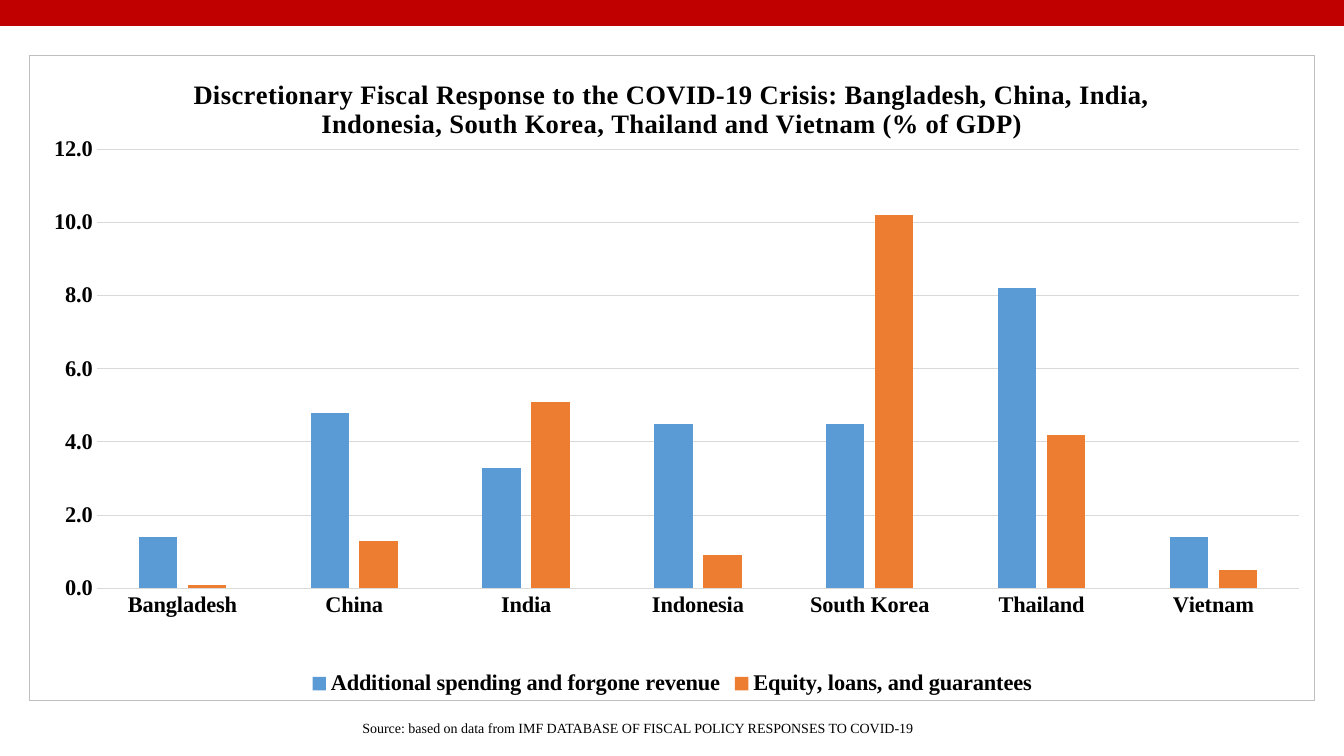
from lxml.etree import SubElement
from pptx import Presentation
from pptx.chart.data import CategoryChartData
from pptx.dml.color import RGBColor
from pptx.enum.chart import XL_CHART_TYPE, XL_LEGEND_POSITION, XL_TICK_MARK
from pptx.enum.shapes import MSO_SHAPE
from pptx.enum.text import PP_ALIGN
from pptx.oxml import parse_xml
from pptx.oxml.ns import nsdecls, qn
from pptx.util import Pt

FACE = "Times New Roman"
GRID = "D9D9D9"
TITLE = ("Discretionary Fiscal Response to the COVID-19 Crisis: Bangladesh, China, India, "
         "Indonesia, South Korea, Thailand and Vietnam (% of GDP)")
SOURCE = "Source: based on data from IMF DATABASE OF FISCAL POLICY RESPONSES TO COVID-19"
COUNTRIES = ["Bangladesh", "China", "India", "Indonesia", "South Korea", "Thailand", "Vietnam"]
MEASURES = [
    ("Additional spending and forgone revenue", "5B9BD5", [1.4, 4.8, 3.3, 4.5, 4.5, 8.2, 1.4]),
    ("Equity, loans, and guarantees", "ED7D31", [0.1, 1.3, 5.1, 0.9, 10.2, 4.2, 0.5]),
]


def color(code):
    return RGBColor.from_string(code)


def apply(target, formats):
    for name, value in formats.items():
        setattr(target, name, value)


def style_font(font, size, bold):
    apply(font, {"name": FACE, "size": Pt(size), "bold": bold})
    font.color.rgb = color("000000")


def style_line(line, code, width):
    line.color.rgb = color(code)
    line.width = Pt(width)


def add_layout(parent, **fractions):
    """Fill a layout element with positions as fractions of the chart."""
    for old in parent.findall(qn("c:layout")):
        parent.remove(old)
    layout = parse_xml(f"<c:layout {nsdecls('c')}/>")
    manual = SubElement(layout, qn("c:manualLayout"))
    if "w" in fractions:
        SubElement(manual, qn("c:layoutTarget")).set("val", "inner")
    for side in ("x", "y"):
        SubElement(manual, qn(f"c:{side}Mode")).set("val", "edge")
    for side, fraction in fractions.items():
        SubElement(manual, qn(f"c:{side}")).set("val", str(fraction))
    return layout


def add_band(slide, left, top, width, height):
    band = slide.shapes.add_shape(MSO_SHAPE.RECTANGLE, Pt(left), Pt(top), Pt(width), Pt(height))
    band.shadow.inherit = False
    band.fill.solid()
    band.fill.fore_color.rgb = color("C00000")
    style_line(band.line, "C00000", 1)


def add_title(chart):
    frame = chart.chart_title.text_frame
    frame.text = TITLE
    run = frame.paragraphs[0].runs[0]
    style_font(run.font, 19, True)
    run.font._element.set("spc", "40")
    chart.chart_title.include_in_layout = False


def style_axes(chart):
    # Country axis
    countries = chart.category_axis
    countries.major_tick_mark = XL_TICK_MARK.NONE
    style_line(countries.format.line, GRID, 0.75)
    style_font(countries.tick_labels.font, 16, True)

    # Share of GDP axis
    share = chart.value_axis
    apply(share, {"minimum_scale": 0, "maximum_scale": 12, "major_unit": 2,
                  "major_tick_mark": XL_TICK_MARK.NONE, "has_major_gridlines": True})
    apply(share.tick_labels, {"number_format": "0.0", "number_format_is_linked": False})
    share.format.line.fill.background()
    style_line(share.major_gridlines.format.line, GRID, 0.75)
    style_font(share.tick_labels.font, 16, True)


def add_response_chart(slide, left, top, width, height):
    data = CategoryChartData(number_format="0.0")
    data.categories = COUNTRIES
    for name, _, shares in MEASURES:
        data.add_series(name, shares)
    chart = slide.shapes.add_chart(XL_CHART_TYPE.COLUMN_CLUSTERED, Pt(left), Pt(top),
                                   Pt(width), Pt(height), data).chart
    style_font(chart.font, 16, True)
    add_title(chart)
    style_axes(chart)

    # Columns
    plot = chart.plots[0]
    apply(plot, {"gap_width": 219, "overlap": -27, "vary_by_categories": False})
    for series, (_, fill, _) in zip(plot.series, MEASURES):
        series.format.fill.solid()
        series.format.fill.fore_color.rgb = color(fill)
        series.invert_if_negative = False

    # Legend
    chart.has_legend = True
    apply(chart.legend, {"position": XL_LEGEND_POSITION.BOTTOM, "include_in_layout": False})
    style_font(chart.legend.font, 16, True)

    # Plot position and frame around the chart
    space = chart._chartSpace
    area = space.chart.plotArea
    area.insert(0, add_layout(area, x=0.052, y=0.145, w=0.936, h=0.681))
    space.chart.addnext(parse_xml(
        f'<c:spPr {nsdecls("c", "a")}><a:solidFill><a:srgbClr val="FFFFFF"/></a:solidFill>'
        '<a:ln w="9525"><a:solidFill><a:srgbClr val="BFBFBF"/></a:solidFill></a:ln></c:spPr>'))


def add_source(slide, left, top, width, height):
    frame = slide.shapes.add_textbox(Pt(left), Pt(top), Pt(width), Pt(height)).text_frame
    frame.word_wrap = True
    line = frame.paragraphs[0]
    line.text = SOURCE
    line.alignment = PP_ALIGN.CENTER
    style_font(line.runs[0].font, 10, False)


def main():
    deck = Presentation()
    apply(deck, {"slide_width": Pt(960), "slide_height": Pt(540)})
    slide = deck.slides.add_slide(deck.slide_layouts[6])
    add_response_chart(slide, 20.9, 39.3, 918.6, 461.6)
    add_source(slide, 149.8, 510.5, 611.3, 19.4)
    add_band(slide, 0, 0, 960, 18)
    deck.save("out.pptx")


if __name__ == "__main__":
    main()
